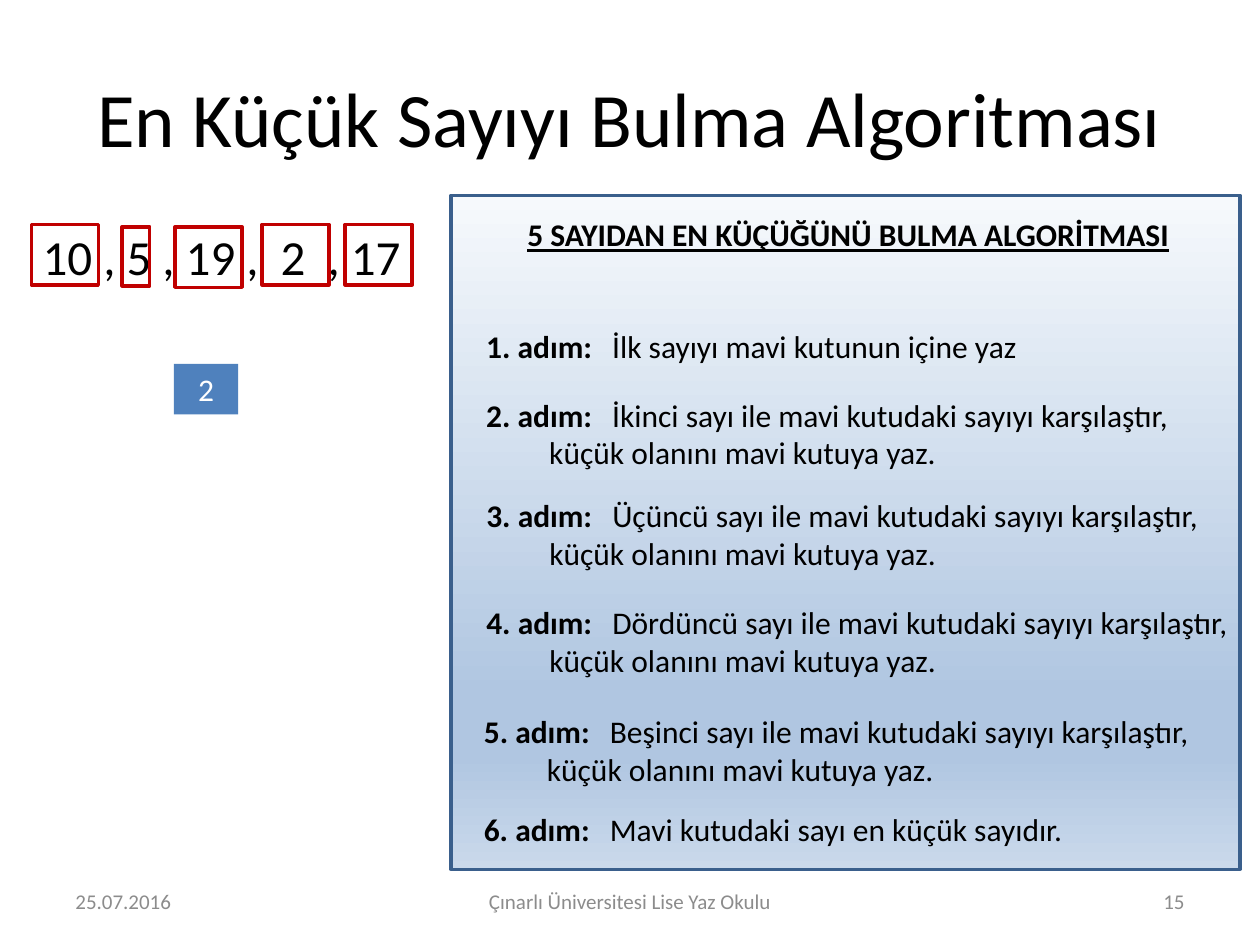
from dataclasses import dataclass

from lxml.etree import SubElement
from pptx import Presentation
from pptx.dml.color import RGBColor
from pptx.enum.shapes import MSO_SHAPE
from pptx.enum.text import MSO_ANCHOR as Anchor, MSO_AUTO_SIZE as AutoSize, PP_ALIGN as Align
from pptx.oxml.ns import qn
from pptx.util import Pt


@dataclass(frozen=True)
class Theme:
    font: str = "Calibri"
    text: str = "000000"
    muted: str = "8C8C8C"
    white: str = "FFFFFF"
    red: str = "C00000"
    blue: str = "4F81BD"
    border: str = "3A5F8C"
    gradient: tuple = ((0, "F6F9FC"), (74, "B0C6E1"), (83, "B0C6E1"), (100, "CAD9EB"))
    title_size: int = 44
    numbers_size: int = 28
    body_size: int = 18
    footer_size: int = 12
    line_width: int = 2


THEME = Theme()

TITLE = "En Küçük Sayıyı Bulma Algoritması"
NUMBER_RUNS = (("10 , 5 , 19 ,", 0), (" ", 6.3), ("2", 0), (" ", 6.3), (", 17", 0))
NUMBER_BOXES = (
    (0.7, 0, 38.2, 34.6),
    (52.5, 1.4, 15.8, 33.8),
    (82.8, 1.4, 38.2, 34.6),
    (132.5, 0, 38.2, 34.6),
    (180, 0, 38.2, 34.6),
)
PANEL_TITLE = "5 SAYIDAN EN KÜÇÜĞÜNÜ BULMA ALGORİTMASI"
WRITE_SMALLER = "küçük olanını mavi kutuya yaz."
STEPS = (
    (13, 72, 321, ("İlk sayıyı mavi kutunun içine yaz",)),
    (13, 110.9, 412.6, ("İkinci sayı ile mavi kutudaki sayıyı karşılaştır,", WRITE_SMALLER)),
    (13, 168.5, 430, ("Üçüncü sayı ile mavi kutudaki sayıyı karşılaştır,", WRITE_SMALLER)),
    (13, 229.7, 447, ("Dördüncü sayı ile mavi kutudaki sayıyı karşılaştır,", WRITE_SMALLER)),
    (11.6, 291.6, 425.5, ("Beşinci sayı ile mavi kutudaki sayıyı karşılaştır,", WRITE_SMALLER)),
    (11.6, 347.8, 349, ("Mavi kutudaki sayı en küçük sayıdır.",)),
)
FOOTERS = (
    (0, 168, "25.07.2016", Align.LEFT),
    (210, 228, "Çınarlı Üniversitesi Lise Yaz Okulu", Align.CENTER),
    (480, 168, "15", Align.RIGHT),
)


def style_run(run, size, color=THEME.text, bold=False, underline=False):
    font = run.font
    font.name, font.size = THEME.font, Pt(size)
    font.bold, font.underline = bold, underline
    font.color.rgb = RGBColor.from_string(color)


def add_run(paragraph, text, size, **style):
    run = paragraph.add_run()
    run.text = text
    style_run(run, size, **style)
    return run


def add_text_box(slide, box, anchor=Anchor.TOP, wrap=True):
    text_frame = slide.shapes.add_textbox(*map(Pt, box)).text_frame
    text_frame.word_wrap = wrap
    text_frame.vertical_anchor = anchor
    return text_frame


def add_label(slide, box, text, size, align=Align.LEFT, anchor=Anchor.MIDDLE, **style):
    paragraph = add_text_box(slide, box, anchor).paragraphs[0]
    paragraph.alignment = align
    add_run(paragraph, text, size, **style)


def add_rectangle(slide, box, fill=None, line=None):
    shape = slide.shapes.add_shape(MSO_SHAPE.RECTANGLE, *map(Pt, box))
    shape.shadow.inherit = False
    if fill:
        shape.fill.solid()
        shape.fill.fore_color.rgb = RGBColor.from_string(fill)
    else:
        shape.fill.background()
    if line:
        shape.line.color.rgb = RGBColor.from_string(line)
        shape.line.width = Pt(THEME.line_width)
    else:
        shape.line.fill.background()
    return shape


def fill_gradient(shape, stops):
    shape.fill.gradient()
    shape.fill.gradient_angle = 270
    stop_list = shape._element.spPr.find(qn("a:gradFill")).find(qn("a:gsLst"))
    for stop in list(stop_list):
        stop_list.remove(stop)
    for position, color in stops:
        stop = SubElement(stop_list, qn("a:gs"), pos=str(position * 1000))
        SubElement(stop, qn("a:srgbClr"), val=color)


def add_numbers(slide, box):
    left, top, width, height = box
    paragraph = add_text_box(slide, box).paragraphs[0]
    paragraph.space_before = Pt(5.6)
    for text, spacing in NUMBER_RUNS:
        run = add_run(paragraph, text, THEME.numbers_size)
        if spacing:
            run._r.get_or_add_rPr().set("spc", str(int(spacing * 100)))
    for x, y, box_width, box_height in NUMBER_BOXES:
        add_rectangle(slide, (left + x, top + 2.2 + y, box_width, box_height), line=THEME.red)

    smallest = add_rectangle(slide, (left + 82.1, top + 82, 36.7, 28.8), fill=THEME.blue)
    smallest.text_frame.vertical_anchor = Anchor.MIDDLE
    paragraph = smallest.text_frame.paragraphs[0]
    paragraph.alignment = Align.CENTER
    add_run(paragraph, "2", THEME.body_size, color=THEME.white)


def add_step(slide, box, number, lines):
    text_frame = add_text_box(slide, box, wrap=False)
    text_frame.auto_size = AutoSize.SHAPE_TO_FIT_TEXT
    for index, line in enumerate(lines):
        paragraph = text_frame.add_paragraph() if index else text_frame.paragraphs[0]
        if index == 0:
            add_run(paragraph, f"{number}. adım:", THEME.body_size, bold=True)
        add_run(paragraph, f"\t{line}", THEME.body_size)


def add_algorithm_panel(slide, box):
    left, top, width, height = box
    fill_gradient(add_rectangle(slide, box, line=THEME.border), THEME.gradient)
    add_label(slide, (left + 11.6, top + 7.9, 430.6, 29), PANEL_TITLE, THEME.body_size,
              Align.CENTER, Anchor.TOP, bold=True, underline=True)
    for number, (x, y, step_width, lines) in enumerate(STEPS, start=1):
        step_box = (left + x, top + y, step_width, 7.5 + 21.8 * len(lines))
        add_step(slide, step_box, number, lines)


def add_footer(slide, box):
    left, top, width, height = box
    for x, label_width, text, align in FOOTERS:
        add_label(slide, (left + x, top, label_width, height), text,
                  THEME.footer_size, align, color=THEME.muted)


def main():
    presentation = Presentation()
    presentation.slide_width, presentation.slide_height = Pt(720), Pt(540)
    slide = presentation.slides.add_slide(presentation.slide_layouts[6])
    add_label(slide, (36, 21.6, 648, 90), TITLE, THEME.title_size, Align.CENTER)
    add_algorithm_panel(slide, (257.8, 111.6, 450.7, 385.2))
    add_numbers(slide, (17.3, 126, 253.4, 370.8))
    add_footer(slide, (36, 500.5, 648, 28.8))
    presentation.save("out.pptx")


if __name__ == "__main__":
    main()
